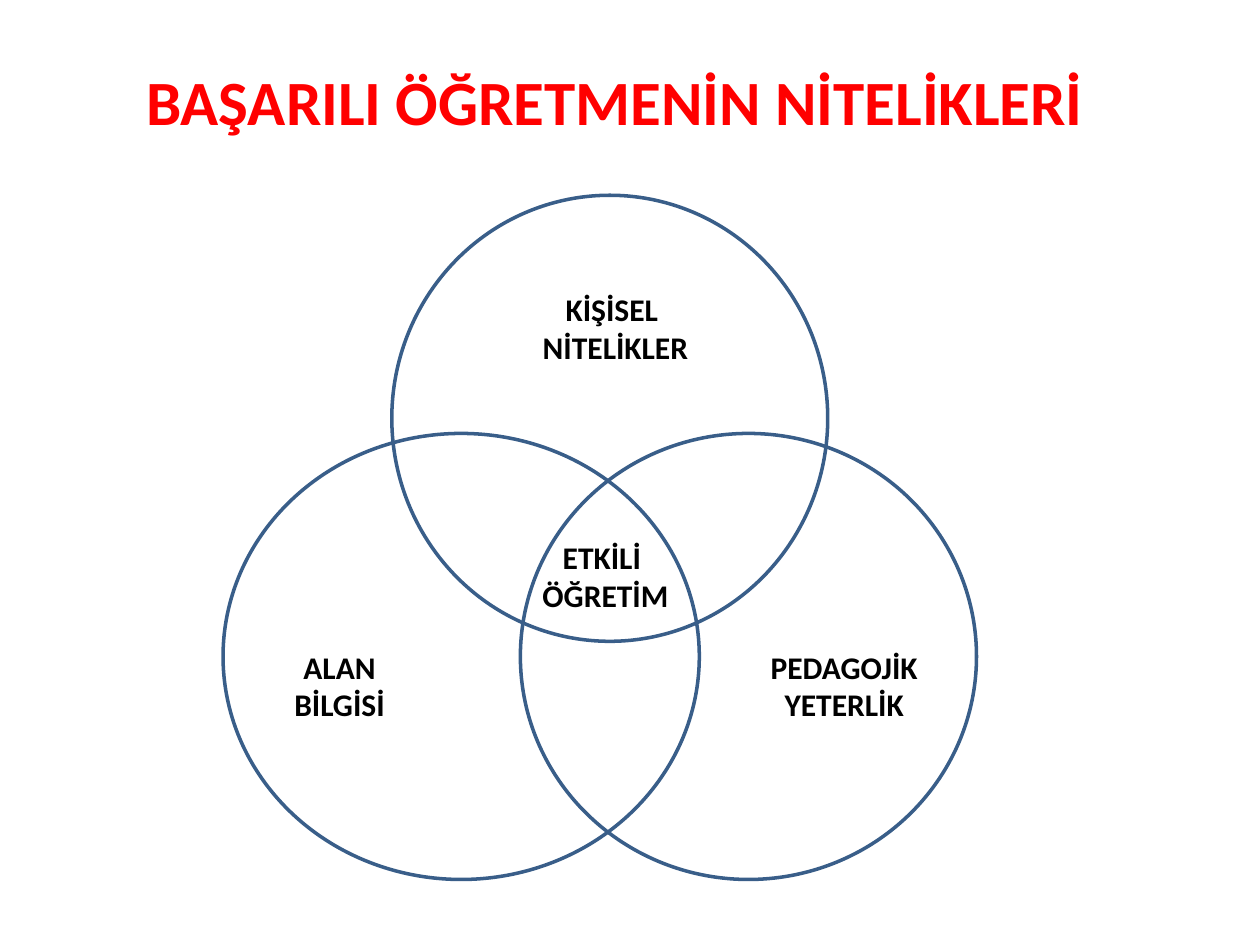
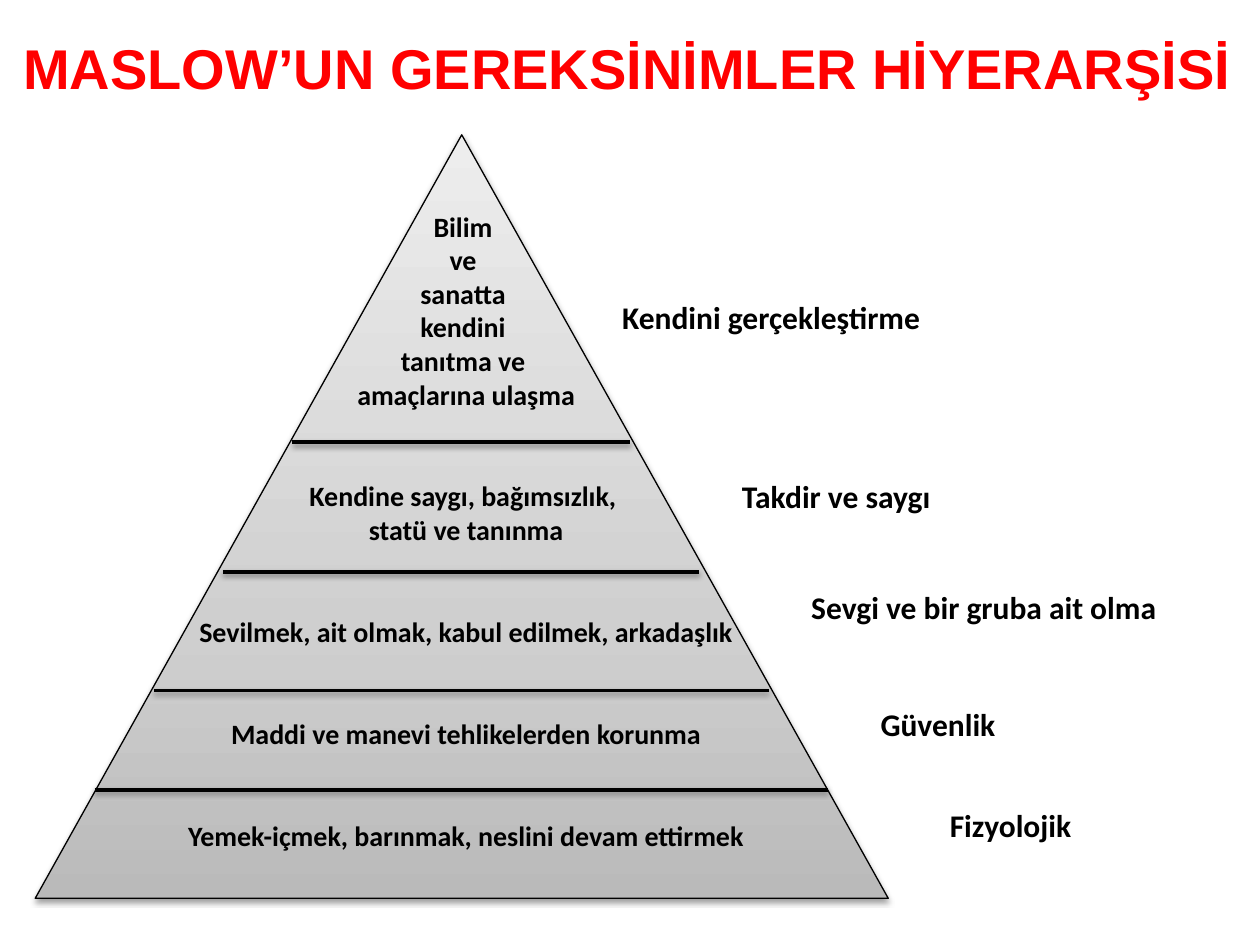
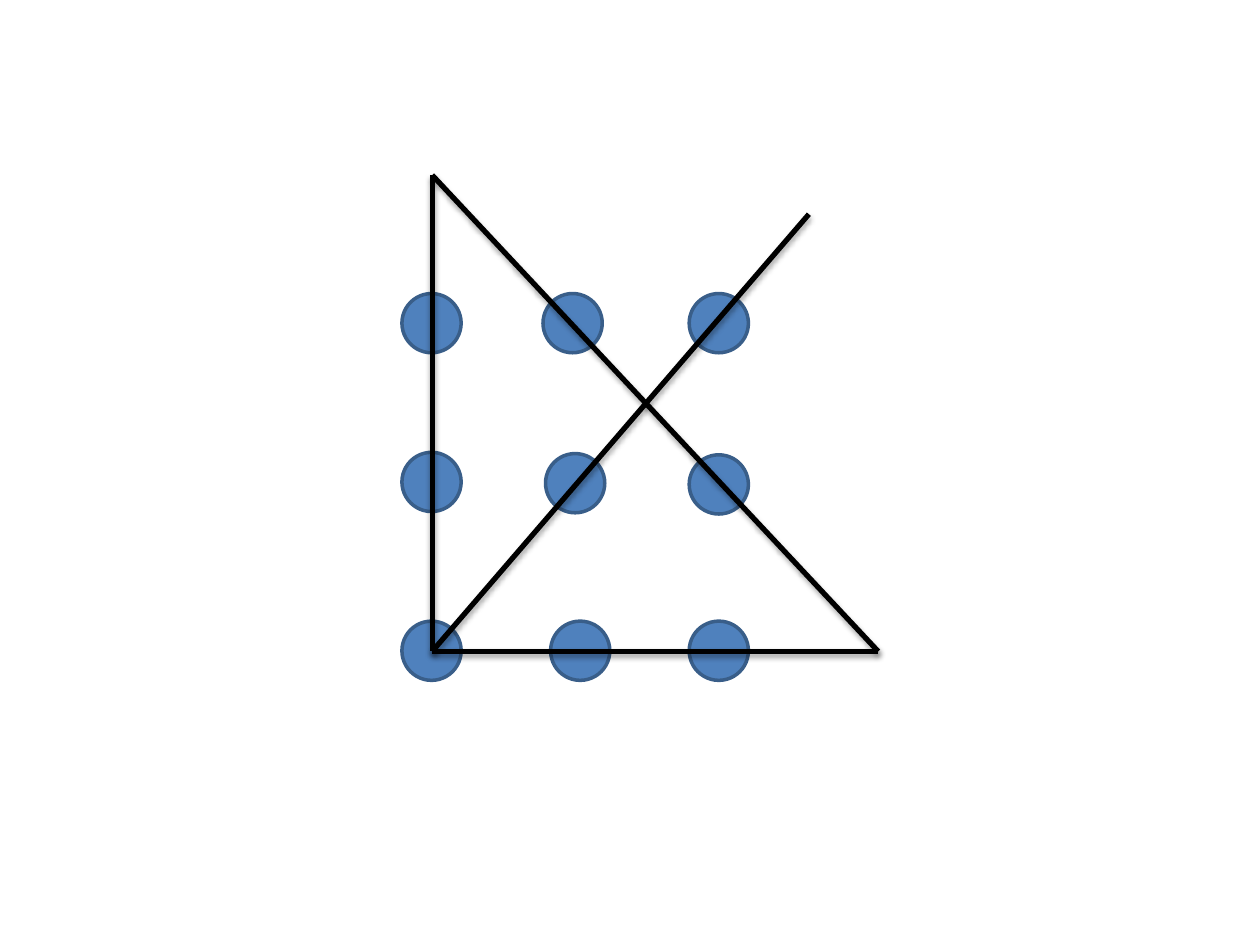
from lxml.etree import SubElement
from pptx import Presentation
from pptx.dml.color import RGBColor
from pptx.enum.shapes import MSO_CONNECTOR, MSO_SHAPE
from pptx.enum.text import MSO_ANCHOR, MSO_AUTO_SIZE, PP_ALIGN
from pptx.oxml.ns import qn
from pptx.util import Inches, Pt

COLOURS = {
    "title": "FF0000",
    "ink": "000000",
    "dot": "4F81BD",
    "outline": "395E89",
}
PYRAMID_STOPS = [(0, "BABABA"), (35, "CFCFCF"), (100, "EDEDED")]
TITLE_ONLY, BLANK = 5, 6


def inches(*lengths):
    return [Inches(length) for length in lengths]


def colour(name):
    return RGBColor.from_string(COLOURS[name])


class SlideBuilder:
    """Holds the deck, its style and the slide being filled."""

    font = "Calibri"

    def __init__(self):
        self.deck = Presentation()
        self.deck.slide_width, self.deck.slide_height = inches(10, 7.5)
        self.slide = None

    def new_slide(self, layout):
        self.slide = self.deck.slides.add_slide(self.deck.slide_layouts[layout])

    def group(self):
        return self.slide.shapes.add_group_shape().shapes

    def title(self, text, place, size, font=font, align=PP_ALIGN.LEFT):
        box = self.slide.shapes.title
        box.left, box.top, box.width, box.height = inches(*place)
        self.fill_text(box, [text], size, align, "title", font)
        box.text_frame.vertical_anchor = MSO_ANCHOR.MIDDLE

    def text(self, lines, place, size=18, align=PP_ALIGN.LEFT, wrap=True):
        box = self.slide.shapes.add_textbox(*inches(*place))
        self.fill_text(box, lines, size, align)
        box.text_frame.word_wrap = wrap
        return box

    def fill_text(self, box, lines, size, align, ink="ink", font=font):
        frame = box.text_frame
        frame.word_wrap = True
        frame.auto_size = MSO_AUTO_SIZE.NONE
        for index, line in enumerate(lines):
            para = frame.add_paragraph() if index else frame.paragraphs[0]
            para.alignment = align
            span = para.add_run()
            span.text = line
            span.font.name = font
            span.font.size = Pt(size)
            span.font.bold = True
            span.font.color.rgb = colour(ink)

    def shape(self, kind, place, fill=None, line="outline", width=2, shapes=None):
        shapes = self.slide.shapes if shapes is None else shapes
        shape = shapes.add_shape(kind, *inches(*place))
        if fill:
            shape.fill.solid()
            shape.fill.fore_color.rgb = colour(fill)
        else:
            shape.fill.background()
        self.outline(shape, line, width)
        self.shadow(shape)
        return shape

    def line(self, start, end, width=2, shapes=None, **shadow):
        shapes = self.slide.shapes if shapes is None else shapes
        connector = shapes.add_connector(
            MSO_CONNECTOR.STRAIGHT, *inches(*start, *end))
        self.outline(connector, "ink", width)
        self.shadow(connector, **shadow)

    def outline(self, item, name, width):
        item.line.color.rgb = colour(name)
        item.line.width = Pt(width)

    def shadow(self, item, opacity=0, distance=1.6):
        """Give a soft shadow below the item, or none when opacity is 0."""
        properties = item._element.spPr
        for old in properties.findall(qn("a:effectLst")):
            properties.remove(old)
        effects = SubElement(properties, qn("a:effectLst"))
        if opacity:
            outer = SubElement(
                effects, qn("a:outerShdw"), blurRad=str(Pt(3.1)),
                dist=str(Pt(distance)), dir="5400000", rotWithShape="0")
            ink = SubElement(outer, qn("a:srgbClr"), val=COLOURS["ink"])
            SubElement(ink, qn("a:alpha"), val=str(opacity * 1000))

    def gradient(self, shape, stops):
        """Fill upwards from the first stop to the last."""
        shape.fill.gradient()
        shape.fill.gradient_angle = 90
        stop_list = shape._element.spPr.find(".//" + qn("a:gsLst"))
        for old in list(stop_list):
            stop_list.remove(old)
        for position, value in stops:
            stop = SubElement(stop_list, qn("a:gs"), pos=str(position * 1000))
            SubElement(stop, qn("a:srgbClr"), val=value)


def teacher_qualities(builder):
    builder.new_slide(TITLE_ONLY)
    builder.title("BAŞARILI ÖĞRETMENİN NİTELİKLERİ", (1.06, 0.44, 7.72, 0.71), 36)
    circles = builder.group()
    for left, top, width in [(3.11, 1.55, 3.46), (4.13, 3.44, 3.62), (1.77, 3.44, 3.78)]:
        builder.shape(MSO_SHAPE.FLOWCHART_CONNECTOR, (left, top, width, 3.54),
                      shapes=circles)
    qualities = [
        (["KİŞİSEL ", "NİTELİKLER"], 4.2, 2.25, 1.37),
        (["PEDAGOJİK", "YETERLİK"], 6.01, 5.09, 1.38),
        (["ALAN", "BİLGİSİ"], 2.23, 5.09, 0.93),
        (["ETKİLİ ", "ÖĞRETİM"], 4.2, 4.22, 1.21),
    ]
    for lines, left, top, width in qualities:
        builder.text(lines, (left, top, width, 0.71), align=PP_ALIGN.CENTER, wrap=False)


def needs_pyramid(builder):
    builder.new_slide(TITLE_ONLY)
    pyramid = builder.shape(MSO_SHAPE.ISOSCELES_TRIANGLE, (0.28, 1.07, 6.77, 6.06),
                            line="ink", width=0.75)
    builder.gradient(pyramid, PYRAMID_STOPS)
    builder.shadow(pyramid, opacity=38)
    builder.title("MASLOW’UN GEREKSİNİMLER HİYERARŞİSİ", (0.04, 0.21, 9.88, 0.64),
                  32, "Arial", PP_ALIGN.CENTER)
    levels = [
        ["Bilim ", "ve ", "sanatta ", "kendini ", "tanıtma ve ", "amaçlarına ulaşma"],
        ["Kendine saygı, bağımsızlık, ", "statü ve tanınma"],
        ["Sevilmek, ait olmak, kabul edilmek, arkadaşlık"],
        ["Maddi ve manevi tehlikelerden korunma"],
        ["Yemek-içmek, barınmak, neslini devam ettirmek"],
    ]
    box = builder.text(sum(levels, []), (0.51, 1.6, 6.38, 5.22), 16, PP_ALIGN.CENTER)
    box.text_frame.vertical_anchor = MSO_ANCHOR.MIDDLE
    first = 0
    for above in levels[:-1]:
        first += len(above)
        box.text_frame.paragraphs[first].space_before = Pt(39)

    needs = [
        ("Kendini gerçekleştirme", 4.84, 2.32, 3.07),
        ("Takdir ve saygı", 5.79, 3.74, 1.71),
        ("Sevgi ve bir gruba ait olma", 6.34, 4.62, 2.96),
        ("Güvenlik", 6.89, 5.55, 1.12),
        ("Fizyolojik", 7.44, 6.35, 1.17),
    ]
    for need, left, top, width in needs:
        builder.text([need], (left, top, width, 0.4))
    for left, right, y in [(2.32, 5, 3.51), (1.77, 5.55, 4.54),
                           (1.22, 6.1, 5.48), (0.75, 6.57, 6.27)]:
        builder.line((left, y), (right, y), opacity=38)


def nine_dots(builder):
    builder.new_slide(BLANK)
    dots = builder.group()
    rows = [
        [(3.19, 2.33), (4.31, 2.33), (5.47, 2.33)],
        [(3.19, 3.59), (4.33, 3.6), (5.47, 3.61)],
        [(3.19, 4.93), (4.37, 4.93), (5.47, 4.93)],
    ]
    for left, top in sum(rows, []):
        builder.shape(MSO_SHAPE.OVAL, (left, top, 0.47, 0.47), "dot", shapes=dots)
    strokes = builder.group()
    peak, corner, far_right, tip = (3.43, 1.39), (3.43, 5.17), (6.97, 5.17), (6.42, 1.7)
    for start, end in [(peak, corner), (corner, far_right), (corner, tip), (peak, far_right)]:
        builder.line(start, end, 3, strokes, opacity=35, distance=1.8)


def main():
    builder = SlideBuilder()
    teacher_qualities(builder)
    needs_pyramid(builder)
    nine_dots(builder)
    builder.deck.save("out.pptx")


if __name__ == "__main__":
    main()
